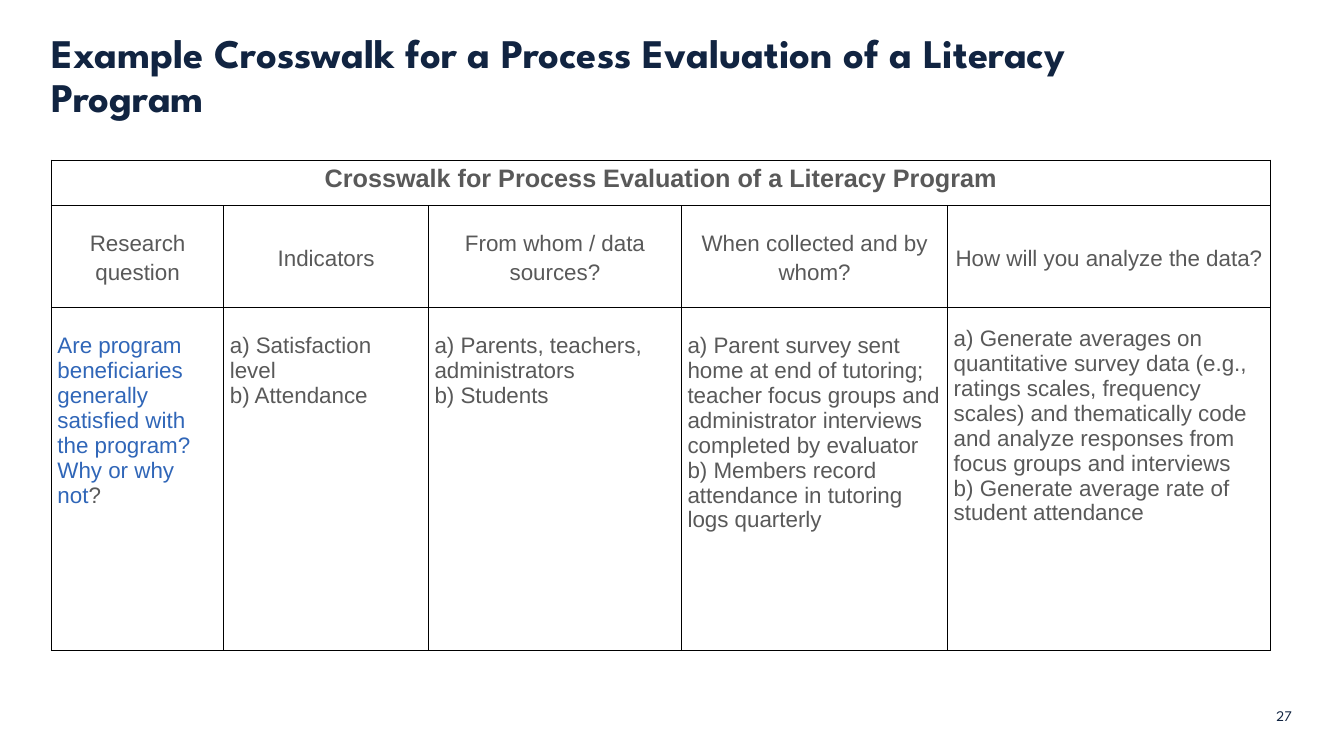
from dataclasses import dataclass

from lxml import etree
from pptx import Presentation
from pptx.dml.color import RGBColor
from pptx.enum import text as txt
from pptx.oxml import ns
from pptx.util import Inches, Pt

COLORS = {
    "navy": "112441",
    "gray": "595959",
    "blue": "3066B8",
    "border": "000000",
    "white": "FFFFFF",
}
HEADING_FONT, TABLE_FONT = "League Spartan", "Arial"


@dataclass
class Label:
    """A text box in the heading font."""
    words: str
    box: tuple[float, float, float, float]
    size: float
    anchor: txt.MSO_ANCHOR
    bold: bool = False
    line_spacing: float = 1.0
    inset_left: float = 0


@dataclass
class Entry:
    """The content and style of one table cell."""
    words: str
    size: float = 16
    bold: bool = False
    color: str = "gray"
    align: txt.PP_ALIGN = txt.PP_ALIGN.LEFT
    anchor: txt.MSO_ANCHOR = txt.MSO_ANCHOR.TOP
    line_spacing: float = 1.0
    inset_top: float = 0


def heading(words: str, **style) -> Entry:
    return Entry(words, align=txt.PP_ALIGN.CENTER, line_spacing=1.15, **style)


def style_run(run, font: str, size: float, color: str, bold: bool) -> None:
    run.font.name = font
    run.font.size = Pt(size)
    run.font.bold = bold
    run.font.color.rgb = RGBColor.from_string(COLORS[color])


def add_label(slide, label: Label) -> None:
    frame = slide.shapes.add_textbox(*map(Inches, label.box)).text_frame
    frame.word_wrap = True
    frame.vertical_anchor = label.anchor
    frame.margin_left = Inches(label.inset_left)
    frame.margin_right = frame.margin_top = frame.margin_bottom = 0
    frame.text = label.words
    paragraph = frame.paragraphs[0]
    paragraph.line_spacing = label.line_spacing
    style_run(paragraph.runs[0], HEADING_FONT, label.size, "navy", label.bold)


def add_borders(cell) -> None:
    properties = cell._tc.get_or_add_tcPr()
    for side in ("a:lnL", "a:lnR", "a:lnT", "a:lnB"):
        line = etree.SubElement(properties, ns.qn(side), w=str(Pt(1)))
        fill = etree.SubElement(line, ns.qn("a:solidFill"))
        etree.SubElement(fill, ns.qn("a:srgbClr"), val=COLORS["border"])


def style_cell(cell) -> None:
    add_borders(cell)
    cell.fill.solid()
    cell.fill.fore_color.rgb = RGBColor.from_string(COLORS["white"])


def fill_cell(cell, entry: Entry) -> None:
    cell.margin_left = cell.margin_right = Inches(0.06)
    cell.margin_top, cell.margin_bottom = Inches(entry.inset_top), 0
    cell.vertical_anchor = entry.anchor
    cell.text_frame.text = entry.words
    for paragraph in cell.text_frame.paragraphs:
        paragraph.alignment = entry.align
        paragraph.line_spacing = entry.line_spacing
        for run in paragraph.runs:
            style_run(run, TABLE_FONT, entry.size, entry.color, entry.bold)


# Content
LABELS = [
    Label("Example Crosswalk for a Process Evaluation of a Literacy Program",
          (0.51, 0.15, 10.33, 1.05), 29, txt.MSO_ANCHOR.BOTTOM,
          bold=True, line_spacing=0.9),
    Label("27", (12.6, 7.02, 0.32, 0.15), 10.5, txt.MSO_ANCHOR.MIDDLE,
          inset_left=0.06),
]
COLUMN_WIDTHS = [1.71, 2.03, 2.51, 2.64, 3.2]
ROW_HEIGHTS = [0.45, 1.01, 3.4]
CAPTION = heading("Crosswalk for Process Evaluation of a Literacy Program",
                  size=18, bold=True)
QUESTIONS = [
    heading(words, anchor=txt.MSO_ANCHOR.MIDDLE)
    for words in (
        "Research question",
        "Indicators",
        "From whom / data sources?",
        "When collected and by whom?",
        "How will you analyze the data?",
    )
]
ANSWERS = [
    Entry("Are program beneficiaries generally satisfied with the program? "
          "Why or why not", color="blue", inset_top=0.26),
    Entry("a) Satisfaction level\nb) Attendance", inset_top=0.26),
    Entry("a) Parents, teachers, administrators\nb) Students", inset_top=0.26),
    Entry("a) Parent survey sent home at end of tutoring; teacher focus groups "
          "and administrator interviews completed by evaluator\n"
          "b) Members record attendance in tutoring logs quarterly",
          inset_top=0.26),
    Entry("a) Generate averages on quantitative survey data (e.g., ratings "
          "scales, frequency scales) and thematically code and analyze "
          "responses from focus groups and interviews\n"
          "b) Generate average rate of student attendance", inset_top=0.19),
]


def add_crosswalk(slide) -> None:
    crosswalk = slide.shapes.add_table(
        len(ROW_HEIGHTS), len(COLUMN_WIDTHS), Inches(0.51), Inches(1.59),
        Inches(sum(COLUMN_WIDTHS)), Inches(sum(ROW_HEIGHTS))).table
    crosswalk.first_row = crosswalk.horz_banding = False
    for column, width in zip(crosswalk.columns, COLUMN_WIDTHS):
        column.width = Inches(width)
    for row, height in zip(crosswalk.rows, ROW_HEIGHTS):
        row.height = Inches(height)
    for cell in crosswalk.iter_cells():
        style_cell(cell)

    # Caption across all columns
    caption = crosswalk.cell(0, 0)
    caption.merge(crosswalk.cell(0, len(COLUMN_WIDTHS) - 1))
    fill_cell(caption, CAPTION)

    # Questions and answers
    for row, entries in enumerate((QUESTIONS, ANSWERS), start=1):
        for column, entry in enumerate(entries):
            fill_cell(crosswalk.cell(row, column), entry)

    # Gray question mark after the blue research question
    research_question = crosswalk.cell(2, 0).text_frame.paragraphs[0]
    question_mark = research_question.add_run()
    question_mark.text = "?"
    style_run(question_mark, TABLE_FONT, 16, "gray", False)


def main() -> None:
    deck = Presentation()
    deck.slide_width, deck.slide_height = Inches(13.33), Inches(7.5)
    slide = deck.slides.add_slide(deck.slide_layouts[6])
    for label in LABELS:
        add_label(slide, label)
    add_crosswalk(slide)
    deck.save("out.pptx")


if __name__ == "__main__":
    main()
